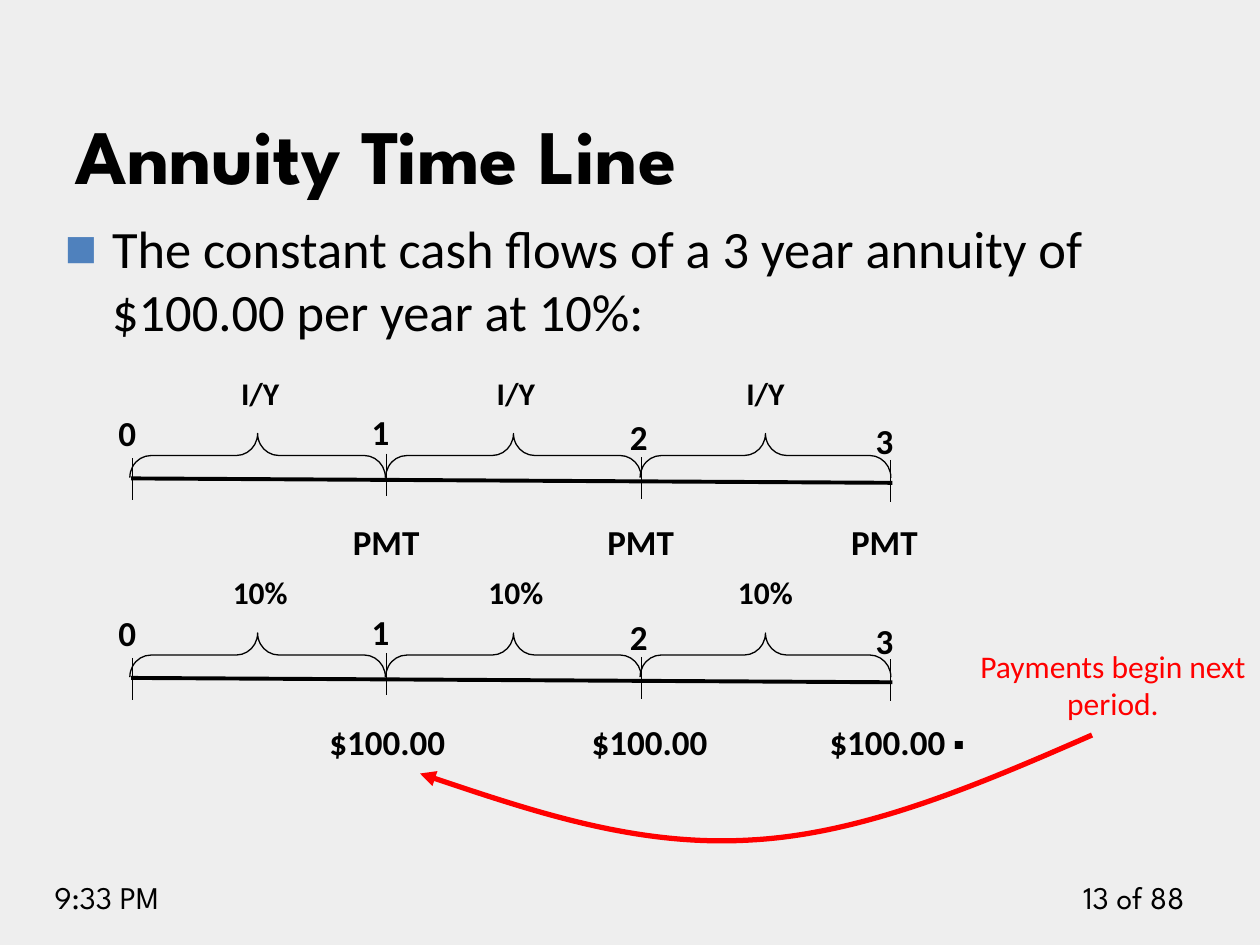
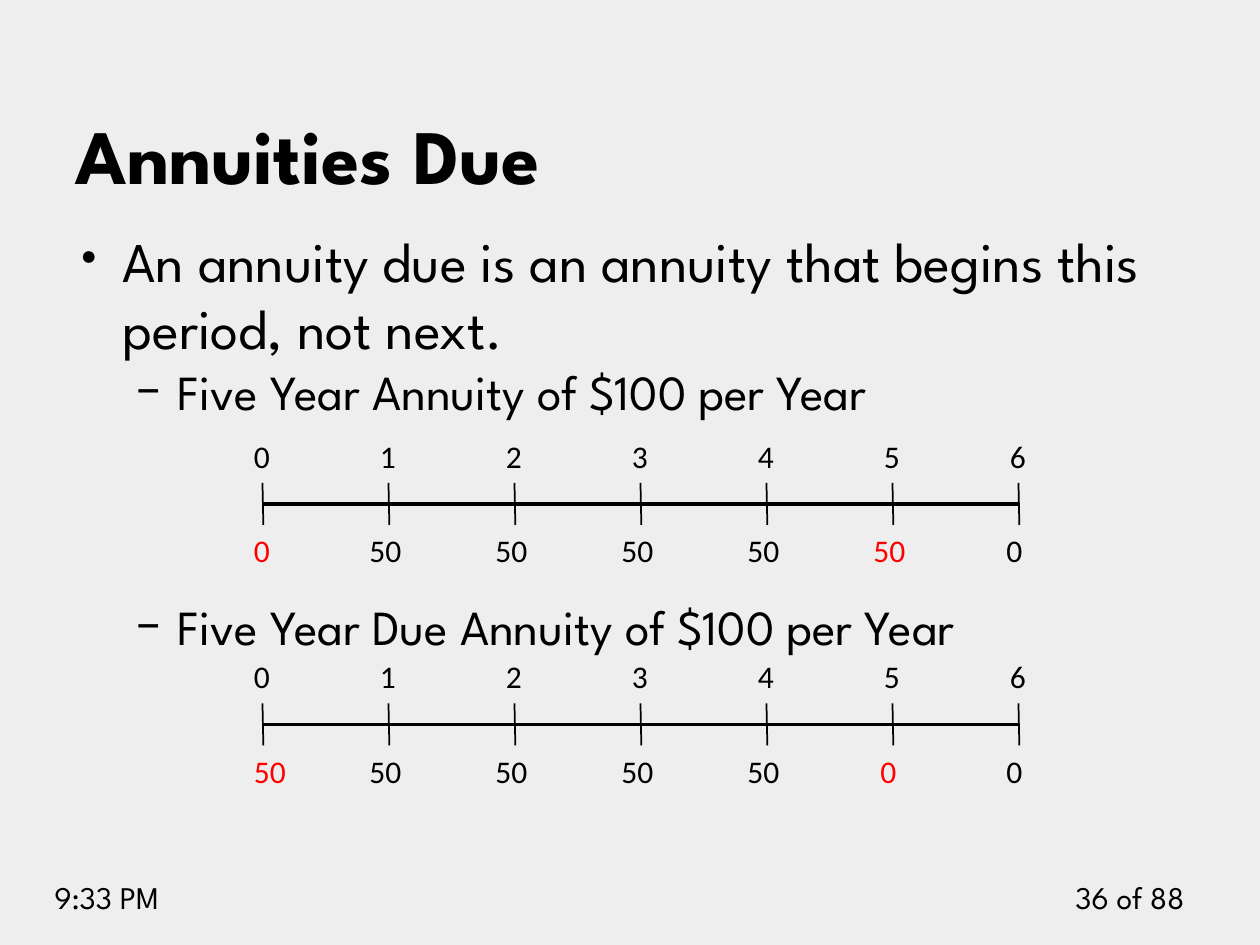
from dataclasses import dataclass

from lxml import etree
from pptx import Presentation
from pptx.dml.color import RGBColor
from pptx.enum.shapes import MSO_CONNECTOR, MSO_SHAPE
from pptx.enum.text import MSO_ANCHOR, PP_ALIGN
from pptx.oxml.ns import qn
from pptx.slide import Slide
from pptx.text.text import TextFrame
from pptx.util import Pt

LEFT, CENTER, RIGHT = PP_ALIGN.LEFT, PP_ALIGN.CENTER, PP_ALIGN.RIGHT
TOP, BOTTOM = MSO_ANCHOR.TOP, MSO_ANCHOR.BOTTOM
STRAIGHT = MSO_CONNECTOR.STRAIGHT
LEFT_BRACE = MSO_SHAPE.LEFT_BRACE


@dataclass(frozen=True)
class Theme:
    paper: RGBColor = RGBColor(0xEE, 0xEE, 0xEE)
    ink: RGBColor = RGBColor(0, 0, 0)
    accent: RGBColor = RGBColor(0xFF, 0, 0)
    bullet: RGBColor = RGBColor(0x4F, 0x81, 0xBD)
    display: str = "League Spartan"
    plain: str = "Calibri"
    title: float = 44
    due_lead: float = 32
    lead: float = 30
    sub: float = 28
    mark: float = 20
    small: float = 18


THEME = Theme()


@dataclass(frozen=True)
class Style:
    size: float
    font: str = THEME.plain
    color: RGBColor = THEME.ink
    bold: bool = False


TITLE = Style(THEME.title, THEME.display, bold=True)
FOOTER = Style(THEME.small, THEME.display)
MARK = Style(THEME.mark, bold=True)
RATE = Style(THEME.small, bold=True)
SMALL = Style(THEME.small)
ALERT = Style(THEME.small, color=THEME.accent)


@dataclass(frozen=True)
class Box:
    left: float
    top: float
    width: float
    height: float


@dataclass(frozen=True)
class Bullet:
    text: str
    char: str
    style: Style
    margin: float
    hang: float
    color: RGBColor = THEME.ink
    percent: int = 100
    before: float = 0


@dataclass(frozen=True)
class PaymentLine:
    """A three-period line with braces; drop is its shift down the slide."""
    drop: float
    rate: str
    payment: str
    payment_centers: tuple[float, ...]
    payment_width: float


@dataclass(frozen=True)
class CashLine:
    """A seven-date line; changed holds the dates shown in the accent colour."""
    axis_y: float
    amounts: tuple[str, ...]
    changed: tuple[int, ...]


# Text
def add_run(paragraph, text: str, style: Style) -> None:
    run = paragraph.add_run()
    run.text = text
    run.font.size = Pt(style.size)
    run.font.name = style.font
    run.font.bold = style.bold
    run.font.color.rgb = style.color


def text_frame(slide: Slide, box: Box, anchor=TOP) -> TextFrame:
    frame = slide.shapes.add_textbox(
        Pt(box.left), Pt(box.top), Pt(box.width), Pt(box.height)).text_frame
    frame.word_wrap = True
    frame.vertical_anchor = anchor
    return frame


def add_text(slide: Slide, box: Box, text: str, style: Style,
             align=LEFT, anchor=TOP):
    paragraph = text_frame(slide, box, anchor).paragraphs[0]
    paragraph.alignment = align
    add_run(paragraph, text, style)
    return paragraph


def add_centered(slide: Slide, center: float, top: float, width: float,
                 text: str, style: Style):
    box = Box(center - width / 2, top, width, 30)
    return add_text(slide, box, text, style, CENTER)


def add_bullets(slide: Slide, box: Box, bullets: tuple[Bullet, ...]) -> None:
    frame = text_frame(slide, box)
    for index, bullet in enumerate(bullets):
        paragraph = frame.add_paragraph() if index else frame.paragraphs[0]
        props = paragraph._p.get_or_add_pPr()
        props.set("marL", str(Pt(bullet.margin)))
        props.set("indent", str(-Pt(bullet.hang)))
        color = etree.SubElement(props, qn("a:buClr"))
        etree.SubElement(color, qn("a:srgbClr"), val=str(bullet.color))
        etree.SubElement(props, qn("a:buSzPct"), val=str(bullet.percent * 1000))
        etree.SubElement(props, qn("a:buFont"), typeface=bullet.style.font)
        etree.SubElement(props, qn("a:buChar"), char=bullet.char)
        if bullet.before:
            paragraph.space_before = Pt(bullet.before)
        add_run(paragraph, bullet.text, bullet.style)


# Lines
def add_line(slide: Slide, x1: float, y1: float, x2: float, y2: float,
             weight: float) -> None:
    line = slide.shapes.add_connector(STRAIGHT, Pt(x1), Pt(y1), Pt(x2), Pt(y2))
    line.line.color.rgb = THEME.ink
    line.line.width = Pt(weight)
    etree.SubElement(line._element.spPr, qn("a:effectLst"))


def outline_only(shape, color: RGBColor, weight: float) -> None:
    shape.shadow.inherit = False
    shape.fill.background()
    shape.line.color.rgb = color
    shape.line.width = Pt(weight)


def add_curved_arrow(slide: Slide, points: tuple[tuple[float, float], ...]) -> None:
    """Start point, then three points for each cubic segment."""
    start, *rest = [(Pt(x), Pt(y)) for x, y in points]
    builder = slide.shapes.build_freeform(*start)
    builder.add_line_segments(rest, close=False)
    arrow = builder.convert_to_shape()
    outline_only(arrow, THEME.accent, 3)
    etree.SubElement(arrow.line._get_or_add_ln(), qn("a:tailEnd"), type="triangle")
    steps = list(arrow._element.iter(qn("a:lnTo")))
    for first in range(0, len(steps), 3):
        curve = etree.Element(qn("a:cubicBezTo"))
        steps[first].addprevious(curve)
        for step in steps[first:first + 3]:
            curve.append(step[0])
            step.getparent().remove(step)


# Time lines
DATES = (75.6, 221, 366.5, 509)
DATE_LABELS = ((72.7, 231.8), (217.4, 231.1), (365, 234), (505.4, 236.2))
TICK_TOPS = (262, 259.2, 261.4, 262.8)
BRACES = ((147.2, 146), (293.4, 146), (437.4, 143.3))
RATE_CENTERS = (148.7, 294.8, 437.4)
BRACE_Y, BRACE_DEPTH = 260.3, 25.2


def draw_payment_line(slide: Slide, line: PaymentLine) -> None:
    drop = line.drop
    add_line(slide, 75, 273.4 + drop, 510, 275.9 + drop, 2.25)
    for date, (x, tick_top) in enumerate(zip(DATES, TICK_TOPS)):
        add_line(slide, x, tick_top + drop, x, tick_top + 24 + drop, 0.75)
        center, top = DATE_LABELS[date]
        add_centered(slide, center, top + drop, 30, str(date), MARK)
    for (center, length), rate_center in zip(BRACES, RATE_CENTERS):
        brace = slide.shapes.add_shape(
            LEFT_BRACE, Pt(center - BRACE_DEPTH / 2),
            Pt(BRACE_Y + drop - length / 2), Pt(BRACE_DEPTH), Pt(length))
        brace.rotation = 90
        brace.adjustments[0] = 0.48
        outline_only(brace, THEME.ink, 0.75)
        add_centered(slide, rate_center, 210 + drop, 61, line.rate, RATE)
    for center in line.payment_centers:
        payment = add_centered(slide, center, 294 + drop, line.payment_width,
                               line.payment, MARK)
        if line is DOLLAR_LINE and center == line.payment_centers[-1]:
            add_run(payment, " ", MARK)
            add_run(payment, "▪", SMALL)


def draw_cash_line(slide: Slide, line: CashLine) -> None:
    start, period, y = 150, 72, line.axis_y
    last = len(line.amounts) - 1
    add_line(slide, start, y, start + last * period, y, 2.25)
    for date, amount in enumerate(line.amounts):
        x = start + date * period
        add_line(slide, x, y - 12, x + 0.5, y + 12, 1)
        add_text(slide, Box(x - 12, y - 42, 24, 29), str(date), SMALL)
        amount_left = x - 18 if date else x - 12
        add_text(slide, Box(amount_left, y + 12, 42, 29), amount,
                 ALERT if date in line.changed else SMALL)


# Content
SYMBOL_LINE = PaymentLine(0, "I/Y", "PMT", (220.7, 366.1, 505.4), 64)
DOLLAR_LINE = PaymentLine(114, "10%", "$100.00", (221.4, 371.2, 512.6), 101)
CASH_LINES = (
    CashLine(288, ("0", "50", "50", "50", "50", "50", " 0"), (0, 5)),
    CashLine(414, ("50", "50", "50", "50", "50", " 0", " 0"), (0, 5)),
)


def new_slide(deck, title: str, page: int) -> Slide:
    slide = deck.slides.add_slide(deck.slide_layouts[6])
    slide.background.fill.solid()
    slide.background.fill.fore_color.rgb = THEME.paper
    add_text(slide, Box(600, 498, 84, 29), f"{page} of 88", FOOTER, RIGHT)
    add_text(slide, Box(24, 498, 114, 29), "9:33 PM", FOOTER)
    add_text(slide, Box(36, 28, 648, 90), title, TITLE, anchor=BOTTOM)
    return slide


def build_time_line(deck) -> None:
    slide = new_slide(deck, "Annuity Time Line", 13)
    add_bullets(slide, Box(30, 120, 648, 356), (
        Bullet("The constant cash flows of a 3 year annuity of $100.00 per year at 10%:",
               "■", Style(THEME.lead), 27, 27, THEME.bullet, 65),
    ))
    for line in (SYMBOL_LINE, DOLLAR_LINE):
        draw_payment_line(slide, line)
    add_text(slide, Box(552, 366, 168, 50), "Payments begin next period.", ALERT, CENTER)
    add_curved_arrow(slide, (
        (624, 420), (558.7, 448.6), (493.2, 476.6), (429, 480),
        (365, 483.8), (302.4, 463), (240, 442)))


def build_annuities_due(deck) -> None:
    slide = new_slide(deck, "Annuities Due", 36)
    sub = Style(THEME.sub, THEME.display)
    add_bullets(slide, Box(36, 126, 648, 356), (
        Bullet("An annuity due is an annuity that begins this period, not next.",
               "•", Style(THEME.due_lead, THEME.display), 27, 27),
        Bullet("Five Year Annuity of $100 per Year", "–", sub, 58.5, 22.5),
        Bullet("Five Year Due Annuity of $100 per Year", "–", sub, 58.5, 22.5,
               before=101),
    ))
    for line in CASH_LINES:
        draw_cash_line(slide, line)


def main() -> None:
    deck = Presentation()
    deck.slide_width, deck.slide_height = Pt(720), Pt(540)
    build_time_line(deck)
    build_annuities_due(deck)
    deck.save("out.pptx")


if __name__ == "__main__":
    main()
